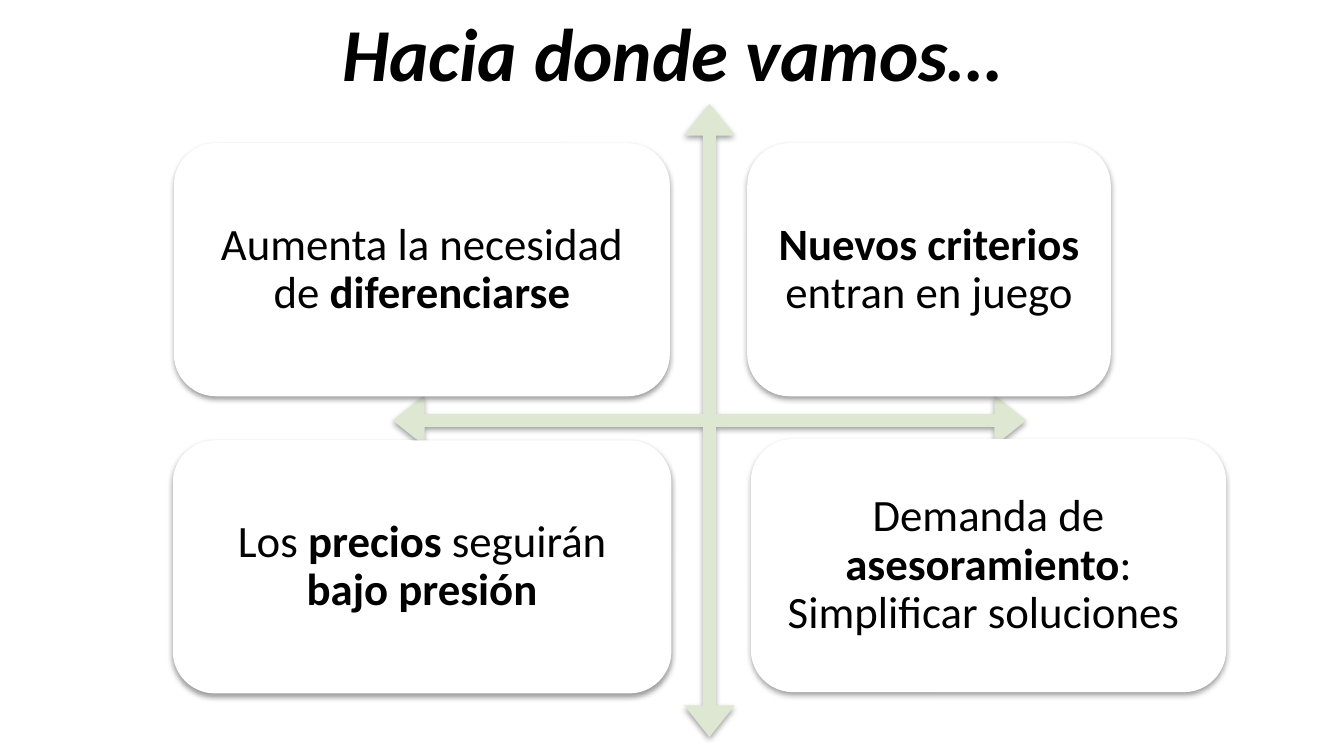
import pptx
import pptx.dml.color
import pptx.enum.shapes
import pptx.enum.text
import pptx.oxml
import pptx.oxml.ns
import pptx.util

SHAPES = pptx.enum.shapes.MSO_SHAPE
COLUMNS, ROWS = 100, 56.25
CELL = 0.1  # inches, both ways


def cells(count):
    return pptx.util.Inches(count * CELL)


def color(hex_value):
    return pptx.dml.color.RGBColor.from_string(hex_value)


def assign(target, values):
    for name, value in values.items():
        setattr(target, name, value)


class Deck:
    """Holds the style and the current slide; lengths are grid columns and rows."""

    ink, paper, axis = "000000", "FFFFFF", "DEE7D1"
    font = "Calibri"
    axis_adjustments = (0.02, 0.04, 0.05)
    card_frame = {
        "word_wrap": True,
        "vertical_anchor": pptx.enum.text.MSO_ANCHOR.MIDDLE,
        **{f"margin_{side}": cells(1) for side in ("left", "top", "right", "bottom")},
    }
    title_frame = {
        "word_wrap": True,
        "auto_size": pptx.enum.text.MSO_AUTO_SIZE.SHAPE_TO_FIT_TEXT,
    }

    def __init__(self):
        self.presentation = pptx.Presentation()
        assign(self.presentation, {"slide_width": cells(COLUMNS), "slide_height": cells(ROWS)})
        self.slide = self.presentation.slides.add_slide(self.presentation.slide_layouts[6])

    def _shadow(self, shape):
        """Add a soft shadow that falls straight down."""
        shape.shadow.inherit = False
        effects = shape.element.spPr.find(pptx.oxml.ns.qn("a:effectLst"))
        effects.append(pptx.oxml.parse_xml(
            f'<a:outerShdw {pptx.oxml.ns.nsdecls("a")} blurRad="{pptx.util.Pt(3.1)}" '
            f'dist="{pptx.util.Pt(1.6)}" dir="5400000" rotWithShape="0">'
            f'<a:srgbClr val="{self.ink}"><a:alpha val="38000"/></a:srgbClr></a:outerShdw>'))

    def _shape(self, preset, box, fill):
        shape = self.slide.shapes.add_shape(preset, *map(cells, box))
        shape.fill.solid()
        shape.fill.fore_color.rgb = color(fill)
        shape.line.fill.background()
        self._shadow(shape)
        return shape

    def _write(self, frame, runs, spacing, **font):
        paragraph = frame.paragraphs[0]
        assign(paragraph, {"alignment": pptx.enum.text.PP_ALIGN.CENTER, "line_spacing": spacing})
        for text, bold in runs:
            run = paragraph.add_run()
            run.text = text
            assign(run.font, {"name": self.font, "bold": bold, **font})
            run.font.color.rgb = color(self.ink)

    def axes(self, box):
        arrows = self._shape(SHAPES.QUAD_ARROW, box, self.axis)
        for index, value in enumerate(self.axis_adjustments):
            arrows.adjustments[index] = value

    def card(self, box, runs):
        frame = self._shape(SHAPES.ROUNDED_RECTANGLE, box, self.paper).text_frame
        assign(frame, self.card_frame)
        self._write(frame, runs, 0.9, size=pptx.util.Pt(24))

    def title(self, box, text):
        frame = self.slide.shapes.add_textbox(*map(cells, box)).text_frame
        assign(frame, self.title_frame)
        self._write(frame, [(text, True)], 1.0, size=pptx.util.Pt(40), italic=True)


def main():
    deck = Deck()
    deck.axes((29.24, 7.74, 47.1, 47.1))

    card_height = 18.84
    trends = [
        (12.94, 10.65, 36.9, [("Aumenta la necesidad de ", False), ("diferenciarse", True)]),
        (55.6, 10.65, 27.05, [("Nuevos criterios ", True), ("entran en juego", False)]),
        (12.86, 32.76, 37.1, [("Los ", False), ("precios", True), (" seguirán ", False),
                              ("bajo presión", True)]),
        (55.87, 32.66, 35.36, [("Demanda de ", False), ("asesoramiento", True),
                               (": Simplificar soluciones ", False)]),
    ]
    for left, top, width, runs in trends:
        deck.card((left, top, width, card_height), runs)

    deck.title((0, 0, COLUMNS, 7.7), "Hacia donde vamos…")
    deck.presentation.save("out.pptx")


if __name__ == "__main__":
    main()
